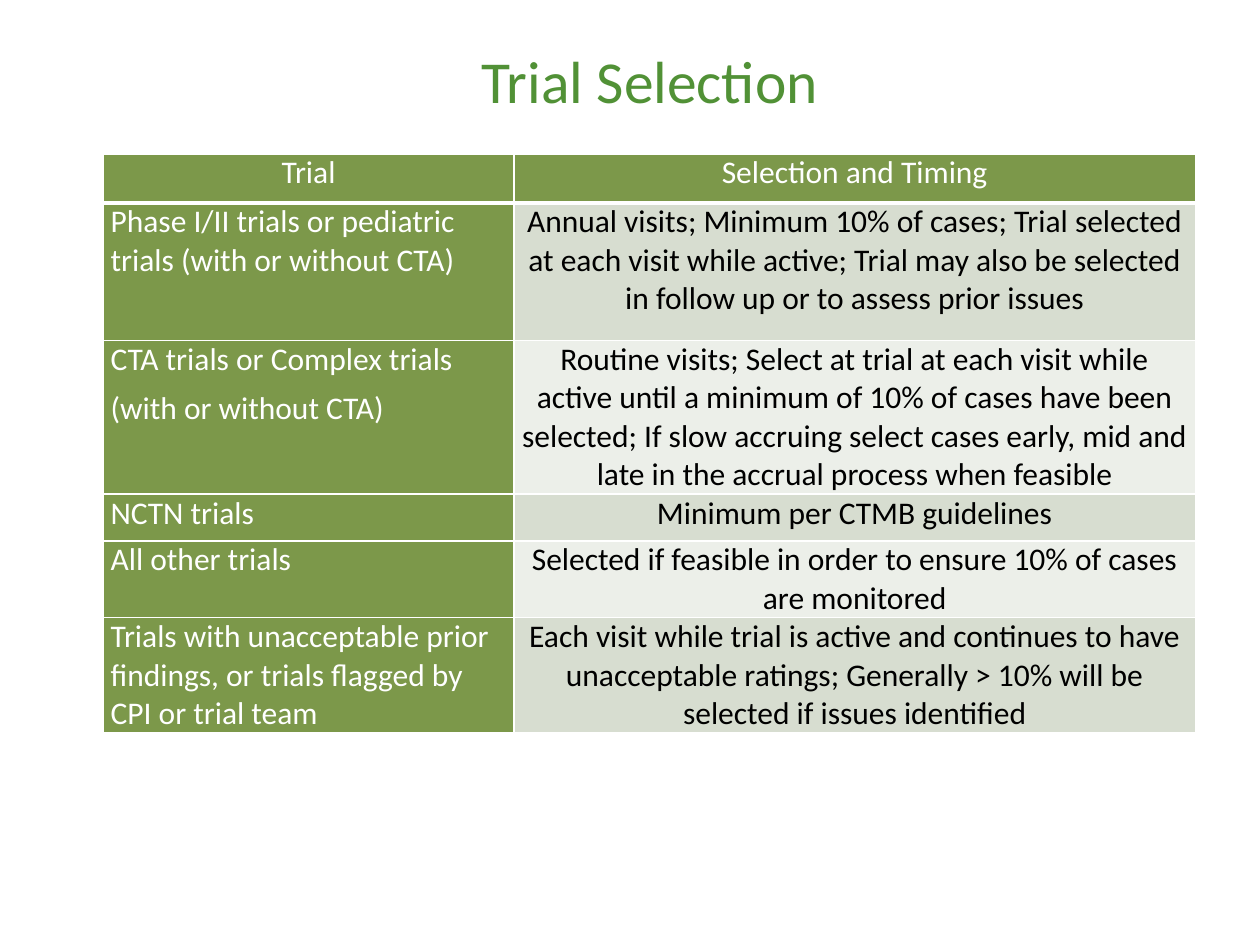
from dataclasses import dataclass

from lxml.etree import SubElement
from pptx import Presentation
from pptx.dml.color import RGBColor
from pptx.enum.text import MSO_ANCHOR, PP_ALIGN
from pptx.oxml.ns import qn
from pptx.slide import Slide
from pptx.table import Table, _Cell
from pptx.util import Cm, Pt


@dataclass(frozen=True)
class Theme:
    font: str = "Calibri"
    title_size: int = 34
    body_size: int = 18
    title: str = "519136"
    accent: str = "7C984A"
    bands: tuple[str, str] = ("D7DDD0", "ECEFE9")
    light: str = "FFFFFF"
    dark: str = "000000"
    rule: float = 1
    header_rule: float = 3


@dataclass(frozen=True)
class TrialRow:
    trial: str
    timing: str
    height: float


THEME = Theme()
COLUMN_WIDTHS = (8.28, 13.74)
HEADER = TrialRow("Trial", "Selection and Timing", 0.99)
TRIAL_ROWS = (
    TrialRow(
        "Phase I/II trials or pediatric trials (with or without CTA)",
        "Annual visits; Minimum 10% of cases; Trial selected at each visit while active; "
        "Trial may also be selected in follow up or to assess prior issues",
        2.77,
    ),
    TrialRow(
        "CTA trials or Complex trials\n(with or without CTA)",
        "Routine visits; Select at trial at each visit while active until a minimum of 10% "
        "of cases have been selected; If slow accruing select cases early, mid and late in "
        "the accrual process when feasible",
        3.1,
    ),
    TrialRow("NCTN trials", "Minimum per CTMB guidelines", 0.94),
    TrialRow(
        "All other trials",
        "Selected if feasible in order to ensure 10% of cases are monitored",
        1.55,
    ),
    TrialRow(
        "Trials with unacceptable prior findings, or trials flagged by CPI or trial team",
        "Each visit while trial is active and continues to have unacceptable ratings; "
        "Generally > 10% will be selected if issues identified",
        2.31,
    ),
)


def draw_title(slide: Slide, text: str) -> None:
    title = slide.shapes.title
    title.left, title.top, title.width, title.height = Cm(4.45), Cm(0.84), Cm(17.3), Cm(1.52)
    title.text_frame.text = text
    title.text_frame.vertical_anchor = MSO_ANCHOR.MIDDLE
    heading = title.text_frame.paragraphs[0]
    heading.alignment = PP_ALIGN.CENTER
    heading.font.name = THEME.font
    heading.font.size = Pt(THEME.title_size)
    heading.font.color.rgb = RGBColor.from_string(THEME.title)


def draw_borders(cell: _Cell, top: float, bottom: float) -> None:
    properties = cell._tc.get_or_add_tcPr()
    sides = {"L": THEME.rule, "R": THEME.rule, "T": top, "B": bottom}
    for side, width in sides.items():
        line = SubElement(properties, qn(f"a:ln{side}"), w=str(Pt(width)))
        fill = SubElement(line, qn("a:solidFill"))
        SubElement(fill, qn("a:srgbClr"), val=THEME.light)


def fill_cell(cell: _Cell, text: str, fill: str, ink: str, align: PP_ALIGN) -> None:
    cell.fill.solid()
    cell.fill.fore_color.rgb = RGBColor.from_string(fill)
    cell.margin_left = cell.margin_right = Cm(0.15)
    cell.margin_top = cell.margin_bottom = 0
    cell.text = text
    for paragraph in cell.text_frame.paragraphs:
        paragraph.alignment = align
        paragraph.space_after = Pt(6)
        paragraph.font.name = THEME.font
        paragraph.font.size = Pt(THEME.body_size)
        paragraph.font.bold = False
        paragraph.font.color.rgb = RGBColor.from_string(ink)


def draw_row(table: Table, index: int, row: TrialRow) -> None:
    table.rows[index].height = Cm(row.height)
    is_header = index == 0
    top = THEME.header_rule if index == 1 else THEME.rule
    bottom = THEME.header_rule if is_header else THEME.rule
    trial, timing = table.cell(index, 0), table.cell(index, 1)
    for cell in (trial, timing):
        draw_borders(cell, top, bottom)
    trial_align = PP_ALIGN.CENTER if is_header else PP_ALIGN.LEFT
    timing_fill = THEME.accent if is_header else THEME.bands[(index - 1) % 2]
    timing_ink = THEME.light if is_header else THEME.dark
    fill_cell(trial, row.trial, THEME.accent, THEME.light, trial_align)
    fill_cell(timing, row.timing, timing_fill, timing_ink, PP_ALIGN.CENTER)


def draw_trial_table(slide: Slide) -> None:
    rows = (HEADER, *TRIAL_ROWS)
    table = slide.shapes.add_table(
        len(rows), len(COLUMN_WIDTHS), Cm(2.08), Cm(3.1),
        Cm(sum(COLUMN_WIDTHS)), Cm(sum(row.height for row in rows)),
    ).table
    for column, width in zip(table.columns, COLUMN_WIDTHS):
        column.width = Cm(width)
    for index, row in enumerate(rows):
        draw_row(table, index, row)


def main() -> None:
    presentation = Presentation()
    presentation.slide_width, presentation.slide_height = Cm(25.4), Cm(19.05)
    slide = presentation.slides.add_slide(presentation.slide_layouts[5])
    draw_title(slide, "Trial Selection")
    draw_trial_table(slide)
    presentation.save("out.pptx")


if __name__ == "__main__":
    main()
